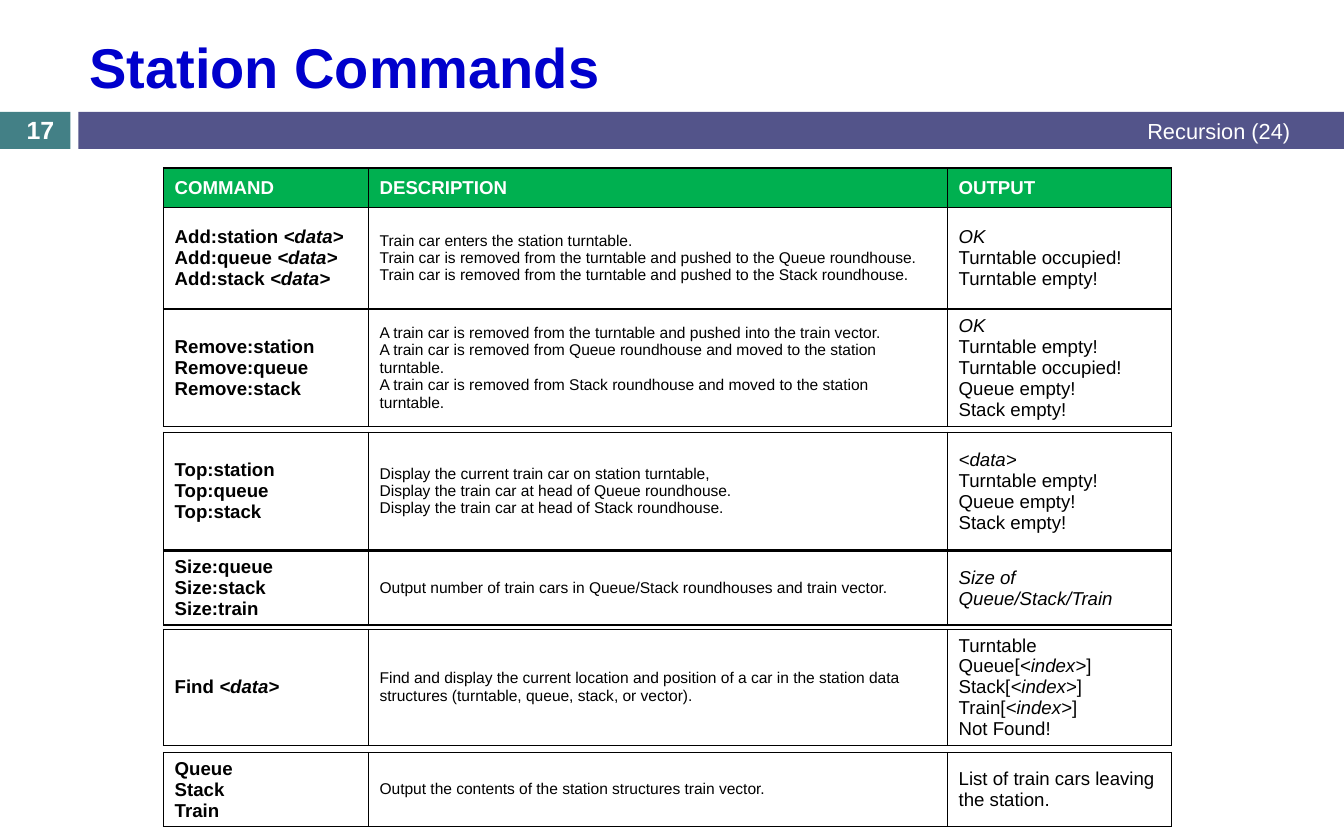
from copy import deepcopy
from lxml.etree import SubElement
from pptx import Presentation
from pptx.dml.color import RGBColor
from pptx.enum.shapes import MSO_SHAPE
from pptx.enum.text import MSO_ANCHOR, PP_ALIGN
from pptx.oxml.ns import qn
from pptx.util import Inches, Pt

COLOURS = {"title": "0000CC", "teal": "438086", "violet": "53548A",
           "header": "00B050", "white": "FFFFFF", "black": "000000"}

# Each cell is a list of paragraphs; \n breaks a line and *...* is italic.
HEADER = [["COMMAND"], ["DESCRIPTION"], ["OUTPUT"]]
ADD = [
    ["Add:station *<data>*\nAdd:queue *<data>*\nAdd:stack *<data>*"],
    ["Train car enters the station turntable.\n"
     "Train car is removed from the turntable and pushed to the Queue roundhouse.\n"
     "Train car is removed from the turntable and pushed to the Stack roundhouse."],
    ["*OK*\nTurntable occupied!\nTurntable empty!"],
]
REMOVE = [
    ["Remove:station\nRemove:queue\nRemove:stack"],
    ["A train car is removed from the turntable and pushed into the train vector.\n"
     "A train car is removed from Queue roundhouse and moved to the station turntable.\n"
     "A train car is removed from Stack roundhouse and moved to the station turntable."],
    ["*OK*\nTurntable empty!", "Turntable occupied!", "Queue empty!", "Stack empty!"],
]
TOP = [
    ["Top:station\nTop:queue\nTop:stack"],
    ["Display the current train car on station turntable,\n"
     "Display the train car at head of Queue roundhouse.\n"
     "Display the train car at head of Stack roundhouse."],
    ["*<data>*\nTurntable empty!\nQueue empty!", "Stack empty!"],
]
SIZE = [
    ["Size:queue\nSize:stack", "Size:train"],
    ["Output number of train cars in Queue/Stack roundhouses and train vector."],
    ["*Size of Queue/Stack/Train*"],
]
FIND = [
    ["Find *<data>*"],
    ["Find and display the current location and position of a car in the station data "
     "structures (turntable, queue, stack, or vector)."],
    ["Turntable\nQueue[*<index>*]\nStack[*<index>*]\nTrain[*<index>*]\nNot Found!"],
]
CONTENTS = [
    ["Queue", "Stack", "Train"],
    ["Output the contents of the station structures train vector."],
    ["List of train cars leaving the station."],
]
# Top of each table, then its rows as (height, cells)
TABLES = [
    (1.5, [(0.35, HEADER), (0.91, ADD)]),
    (2.76, [(1.05, REMOVE)]),
    (3.86, [(1.05, TOP)]),
    (4.92, [(0.49, SIZE)]),
    (5.62, [(0.91, FIND)]),
    (6.72, [(0.49, CONTENTS)]),
]
TABLE_LEFT = 1.46
COLUMNS = [1.83, 5.17, 2]
COLUMN_FORMATS = [{"size": Pt(12), "bold": True},
                  {"size": Pt(10), "bold": False},
                  {"size": Pt(12), "bold": False}]
HEADER_FORMAT = {"size": Pt(12), "bold": True}

BARS = [((0, 1, 0.63, 0.33), "teal"), ((0.7, 1, 11.3, 0.33), "violet")]
LABELS = [
    ("Station Commands", (0.7, 0.19, 10.91, 0.8), PP_ALIGN.LEFT, "title",
     {"size": Pt(36), "bold": True}),
    ("Recursion (24)", (6.17, 1, 5.45, 0.33), PP_ALIGN.RIGHT, "white",
     {"size": Pt(14), "bold": False}),
    ("17", (0, 1.01, 0.72, 0.3), PP_ALIGN.CENTER, "white",
     {"size": Pt(16), "bold": True}),
]


def colour(name):
    return RGBColor.from_string(COLOURS[name])


def write(frame, paragraphs, colour_name, formats, align=PP_ALIGN.LEFT):
    """Fill a text frame, turning \\n into line breaks and *...* into italics."""
    for index, text in enumerate(paragraphs):
        para = frame.paragraphs[0] if index == 0 else frame.add_paragraph()
        para.alignment = align
        for line_number, line in enumerate(text.split("\n")):
            if line_number:
                para.add_line_break()
            for part_number, part in enumerate(line.split("*")):
                if part:
                    span = para.add_run()
                    span.text = part
                    span.font.name = "Arial"
                    span.font.italic = part_number % 2 == 1
                    span.font.color.rgb = colour(colour_name)
                    for key, value in formats.items():
                        setattr(span.font, key, value)
        # A break needs the run's size, or its line takes the default height
        for line_break in para._p.findall(qn("a:br")):
            line_break.append(deepcopy(span._r.rPr))


def add_borders(cell):
    properties = cell._tc.get_or_add_tcPr()
    for position, side in enumerate(("a:lnL", "a:lnR", "a:lnT", "a:lnB")):
        line = SubElement(properties, qn(side), w=str(Pt(1)))
        fill = SubElement(line, qn("a:solidFill"))
        SubElement(fill, qn("a:srgbClr"), val=COLOURS["black"])
        properties.insert(position, line)


def add_command_table(page, top, rows):
    height = sum(row_height for row_height, _ in rows)
    table = page.shapes.add_table(
        len(rows), len(COLUMNS), Inches(TABLE_LEFT), Inches(top),
        Inches(sum(COLUMNS)), Inches(height)).table
    table.first_row = table.horz_banding = False
    for column, width in zip(table.columns, COLUMNS):
        column.width = Inches(width)
    for row, (row_height, cells) in zip(table.rows, rows):
        row.height = Inches(row_height)
        is_header = cells is HEADER
        for cell, paragraphs, formats in zip(row.cells, cells, COLUMN_FORMATS):
            cell.vertical_anchor = MSO_ANCHOR.MIDDLE
            cell.fill.solid()
            cell.fill.fore_color.rgb = colour("header" if is_header else "white")
            add_borders(cell)
            write(cell.text_frame, paragraphs, "white" if is_header else "black",
                  HEADER_FORMAT if is_header else formats)


def main():
    deck = Presentation()
    deck.slide_width, deck.slide_height = Inches(12), Inches(7.5)
    page = deck.slides.add_slide(deck.slide_layouts[6])

    for place, fill in BARS:
        bar = page.shapes.add_shape(MSO_SHAPE.RECTANGLE, *map(Inches, place))
        bar.shadow.inherit = False
        bar.fill.solid()
        bar.fill.fore_color.rgb = colour(fill)
        bar.line.fill.background()

    for top, rows in TABLES:
        add_command_table(page, top, rows)

    for text, place, align, colour_name, formats in LABELS:
        frame = page.shapes.add_textbox(*map(Inches, place)).text_frame
        frame.word_wrap = True
        frame.vertical_anchor = MSO_ANCHOR.MIDDLE
        write(frame, [text], colour_name, formats, align)

    deck.save("out.pptx")


if __name__ == "__main__":
    main()
